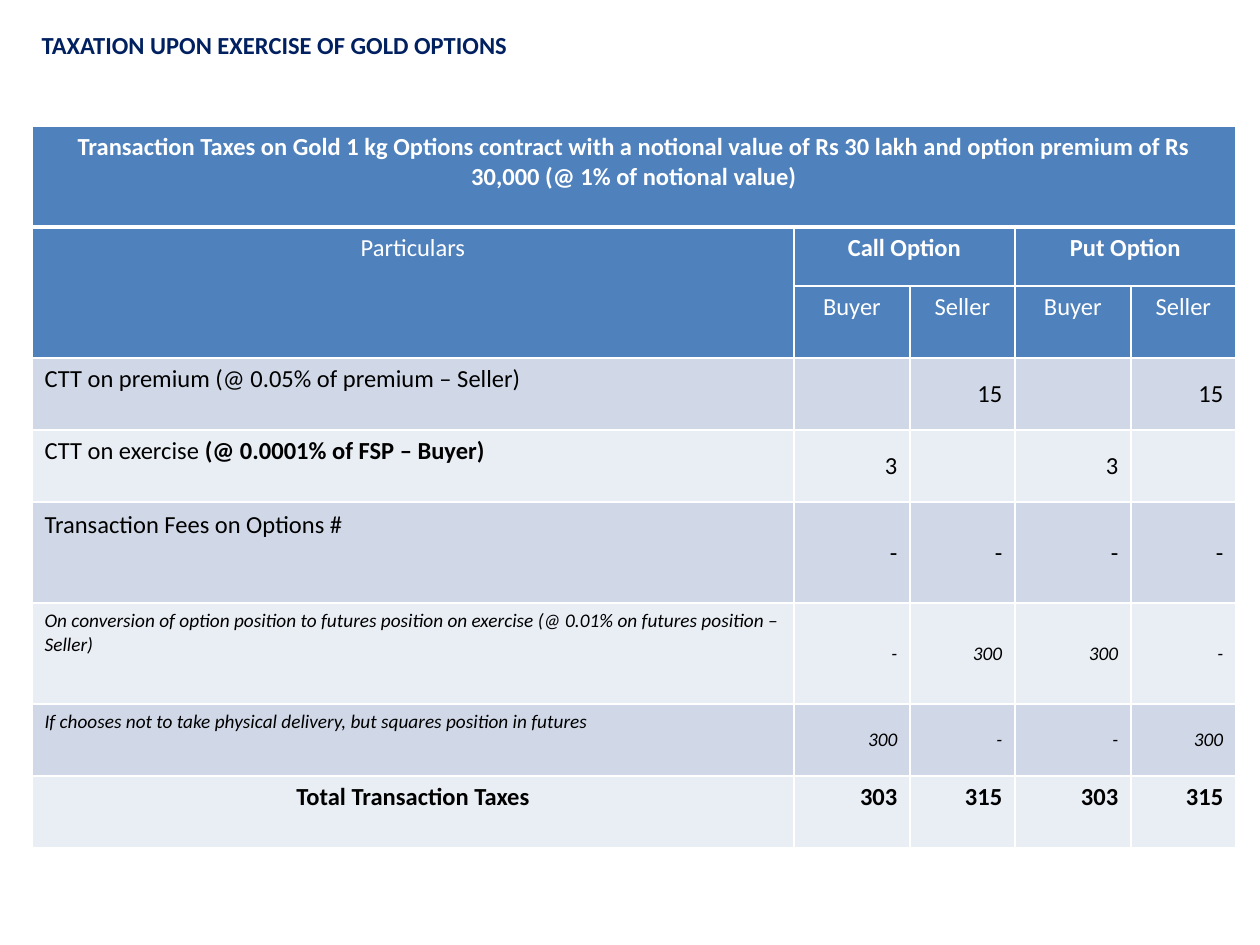
from lxml.etree import SubElement
from pptx import Presentation
from pptx.dml.color import RGBColor
from pptx.enum.text import MSO_ANCHOR as ANCHOR, PP_ALIGN as ALIGN
from pptx.oxml.ns import qn
from pptx.util import Pt

PX = 914400 / 126
NAVY = RGBColor(0x00, 0x20, 0x60)
BLUE = RGBColor(0x4F, 0x81, 0xBD)
BAND_DARK = RGBColor(0xD0, 0xD8, 0xE8)
BAND_LIGHT = RGBColor(0xE9, 0xED, 0xF4)
WHITE = RGBColor(0xFF, 0xFF, 0xFF)
BLACK = RGBColor(0x00, 0x00, 0x00)

COLS = [762, 116, 105, 116, 105]
ROWS = [101, 59, 72, 72, 72, 101, 101, 72, 72]
HEADER_ROWS = 3
FEES_ROW, TOTAL_ROW = 5, 8
ITALIC_ROWS = (6, 7)
MERGES = [(0, 0, 0, 4), (1, 0, 2, 0), (1, 1, 1, 2), (1, 3, 1, 4)]
BOLD_HEADERS = [(0, 0), (1, 1), (1, 3)]
CELLS = [
    ["Transaction Taxes on Gold 1 kg Options contract with a notional value of "
     "Rs 30 lakh and option premium of Rs 30,000 (@ 1% of notional value)", "", "", "", ""],
    ["Particulars", "Call Option", "", "Put Option", ""],
    ["", "Buyer", "Seller", "Buyer", "Seller"],
    ["CTT on premium (@ 0.05% of premium – Seller)", "", "15", "", "15"],
    ["CTT on exercise |(@ 0.0001% of FSP – Buyer)", "3", "", "3", ""],
    ["Transaction Fees on Options #", "-", "-", "-", "-"],
    ["On conversion of option position to futures position on exercise "
     "(@ 0.01% on futures position – Seller)", "-", "300", "300", "-"],
    ["If chooses not to take physical delivery, but squares position in futures",
     "300", "-", "-", "300"],
    ["Total Transaction Taxes", "303", "315", "303", "315"],
]


def px(n):
    return round(n * PX)


def set_borders(cell, widths):
    """Draw white borders; widths maps the sides L, R, T, B to points."""
    tcPr = cell._tc.get_or_add_tcPr()
    for side, width in widths.items():
        ln = SubElement(tcPr, qn(f"a:ln{side}"), w=str(Pt(width)))
        fill = SubElement(ln, qn("a:solidFill"))
        SubElement(fill, qn("a:srgbClr"), val=str(WHITE))


prs = Presentation()
prs.slide_width, prs.slide_height = px(1260), px(945)
s = prs.slides.add_slide(prs.slide_layouts[5])

title = s.shapes.title
title.left, title.top, title.width, title.height = px(29), px(24), px(912), px(69)
tf = title.text_frame
tf.vertical_anchor = ANCHOR.TOP
p = tf.paragraphs[0]
p.alignment = ALIGN.LEFT
r = p.add_run()
r.text = "TAXATION UPON EXERCISE OF GOLD OPTIONS"
for name, value in {"name": "Calibri", "size": Pt(14), "bold": True}.items():
    setattr(r.font, name, value)
r.font.color.rgb = NAVY

table = s.shapes.add_table(len(ROWS), len(COLS), px(32), px(126),
                           px(sum(COLS)), px(sum(ROWS))).table
table.first_row = table.horz_banding = False
for col, width in zip(table.columns, COLS):
    col.width = px(width)
for row, height in zip(table.rows, ROWS):
    row.height = px(height)
for top, left, bottom, right in MERGES:
    table.cell(top, left).merge(table.cell(bottom, right))

for i, texts in enumerate(CELLS):
    header = i < HEADER_ROWS
    italic = i in ITALIC_ROWS
    band = BAND_DARK if i % 2 else BAND_LIGHT
    for j, text in enumerate(texts):
        cell = table.cell(i, j)
        set_borders(cell, {"L": 1, "R": 1, "T": 3 if i == 1 else 1, "B": 3 if i == 0 else 1})
        cell.fill.solid()
        cell.fill.fore_color.rgb = BLUE if header else band
        number = j > 0 and not header
        if number and i != TOTAL_ROW:
            cell.vertical_anchor = ANCHOR.MIDDLE

        p = cell.text_frame.paragraphs[0]
        if number:
            p.alignment = ALIGN.RIGHT
        else:
            p.alignment = ALIGN.CENTER if header or i == TOTAL_ROW else ALIGN.LEFT
        if i == FEES_ROW:
            p.line_spacing, p.space_after = 1.07, Pt(8)
        if not text:
            p.font.size = Pt(14)
            continue
        for k, part in enumerate(text.split("|")):
            r = p.add_run()
            r.text = part
            style = {
                "name": "Calibri",
                "size": Pt(11 if italic else 14),
                "bold": k == 1 or i == TOTAL_ROW or (i, j) in BOLD_HEADERS,
                "italic": italic,
            }
            for name, value in style.items():
                setattr(r.font, name, value)
            r.font.color.rgb = WHITE if header else BLACK

prs.save("out.pptx")
